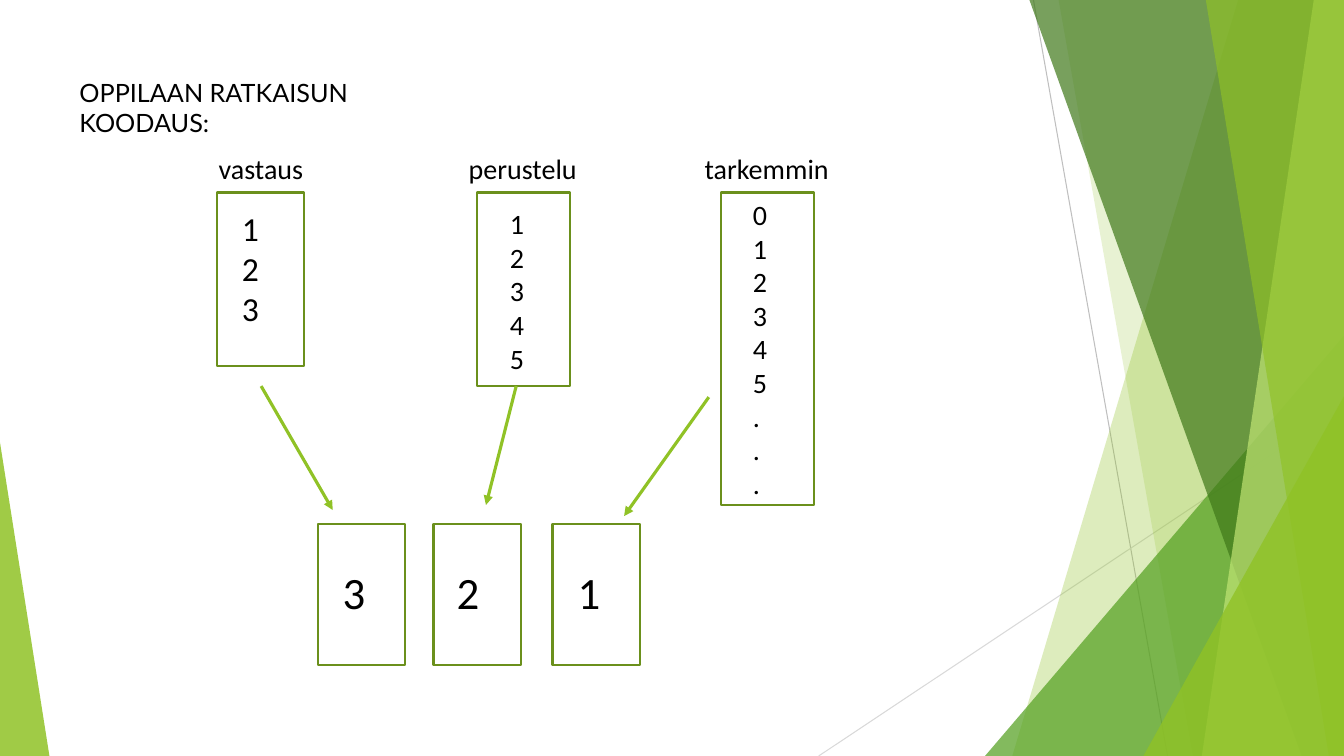
import pptx
import pptx.util
import pptx.dml.color
import pptx.enum.shapes
import pptx.oxml.ns
from lxml import etree

RGBColor = pptx.dml.color.RGBColor
Inches = pptx.util.Inches
Pt = pptx.util.Pt
SHAPES = pptx.enum.shapes.MSO_SHAPE

LIME = RGBColor(0x90, 0xC2, 0x26)
GREEN = RGBColor(0x54, 0xA0, 0x21)
FOREST = RGBColor(0x3F, 0x78, 0x19)
PALE = RGBColor(0xC0, 0xE4, 0x74)
OLIVE = RGBColor(0x6B, 0x90, 0x1C)
GREY = RGBColor(0xBF, 0xBF, 0xBF)
LIGHT_GREY = RGBColor(0xD9, 0xD9, 0xD9)
BLACK = RGBColor(0, 0, 0)

WIDTH, HEIGHT = 13.33, 7.5
LIST_TOP, LABEL_TOP = 1.91, 1.45
CODE_TOP, CODE_WIDTH, CODE_HEIGHT = 5.2, 0.87, 1.4

TITLE = "OPPILAAN RATKAISUN KOODAUS:"
HAIRLINES = [
    ((10.25, 0), (11.58, HEIGHT), GREY),
    ((WIDTH, 4.03), (8.12, HEIGHT), LIGHT_GREY),
]
FACETS = [
    ("band", 12.28, 10.04, LIME, 30),
    ("band", 10.5, 11.83, LIME, 20),
    ("corner", 9.77, 3.33, 3.56, 1, GREEN, 72),
    ("band", 10.21, 12.91, FOREST, 70),
    ("band", 13.03, 11.92, PALE, 70),
    ("band", 11.96, 13.18, LIME, 65),
    ("corner", 11.34, 3.93, 1.99, 1, LIME, 80),
    ("corner", 0, 4.39, 0.49, 0, LIME, 85),
]
COLUMNS = [
    ("vastaus", (2.07, 1.05), (2.15, 0.87, 1.72), "123", (2.3, 2.01, 0.37), 24),
    ("perustelu", (4.55, 1.29), (4.73, 0.92, 1.92), "12345", (4.96, 2, 0.34), 20),
    ("tarkemmin", (6.89, 1.45), (7.15, 0.92, 3.1), "012345...", (7.37, 1.91, 0.34), 20),
]
CODES = [("3", 3.15, 3.3), ("2", 4.3, 4.43), ("1", 5.48, 5.63)]
ARROWS = [
    ((2.59, 3.83), (3.3, 5.06)),
    ((5.12, 3.83), (4.82, 5.01)),
    ((7.03, 3.94), (6.19, 5.12)),
]

deck = pptx.Presentation()
deck.slide_width, deck.slide_height = Inches(WIDTH), Inches(HEIGHT)
page = deck.slides.add_slide(deck.slide_layouts[6])


def add_line(start, end, color, weight):
    line = page.shapes.add_connector(
        pptx.enum.shapes.MSO_CONNECTOR.STRAIGHT, *map(Inches, start + end))
    line.line.color.rgb = color
    line.line.width = Pt(weight)
    etree.SubElement(line._element.spPr, pptx.oxml.ns.qn("a:effectLst"))
    return line


def add_arrow(start, end):
    arrow = add_line(start, end, LIME, 2.25)
    etree.SubElement(arrow.line._get_or_add_ln(), pptx.oxml.ns.qn("a:tailEnd"), type="triangle")


def paint(shape, color, opacity):
    shape.shadow.inherit = False
    shape.line.fill.background()
    shape.fill.solid()
    shape.fill.fore_color.rgb = color
    tint = shape._element.spPr.find(".//" + pptx.oxml.ns.qn("a:srgbClr"))
    etree.SubElement(tint, pptx.oxml.ns.qn("a:alpha"), val=str(opacity * 1000))


def add_band(top_x, bottom_x):
    outline = page.shapes.build_freeform(Inches(top_x), 0)
    corners = [(WIDTH, 0), (WIDTH, HEIGHT), (bottom_x, HEIGHT)]
    outline.add_line_segments([(Inches(x), Inches(y)) for x, y in corners])
    return outline.convert_to_shape()


def add_corner(left, top, width, apex):
    corner = page.shapes.add_shape(
        SHAPES.ISOSCELES_TRIANGLE, *map(Inches, (left, top, width, HEIGHT - top)))
    corner.adjustments[0] = apex
    return corner


def add_frame(left, top, width, height):
    frame = page.shapes.add_shape(SHAPES.RECTANGLE, *map(Inches, (left, top, width, height)))
    frame.shadow.inherit = False
    frame.fill.background()
    frame.line.color.rgb = OLIVE
    frame.line.width = Pt(1.5)


def add_text(lines, left, top, width, height, size, font="Calibri", wrap=False):
    box = page.shapes.add_textbox(*map(Inches, (left, top, width, height)))
    box.text_frame.word_wrap = wrap
    box.text_frame.text = "\n".join(lines)
    for para in box.text_frame.paragraphs:
        para.font.name = font
        para.font.size = Pt(size)
        para.font.color.rgb = BLACK


for start, end, color in HAIRLINES:
    add_line(start, end, color, 0.75)

makers = {"band": add_band, "corner": add_corner}
for kind, *geometry, color, opacity in FACETS:
    paint(makers[kind](*geometry), color, opacity)

for label, (label_left, label_width), (left, width, height), marks, marks_at, size in COLUMNS:
    add_frame(left, LIST_TOP, width, height)
    add_text([label], label_left, LABEL_TOP, label_width, 0.44, 20)
    add_text(marks, *marks_at, 0.1 + len(marks) * size / 60, size)

for start, end in ARROWS:
    add_arrow(start, end)

for code, frame_left, text_left in CODES:
    add_frame(frame_left, CODE_TOP, CODE_WIDTH, CODE_HEIGHT)
    add_text([code], text_left, 5.55, 0.43, 0.64, 32)

add_text([TITLE], 0.69, 0.72, 3.86, 0.4, 18, "Lato", True)

deck.save("out.pptx")
